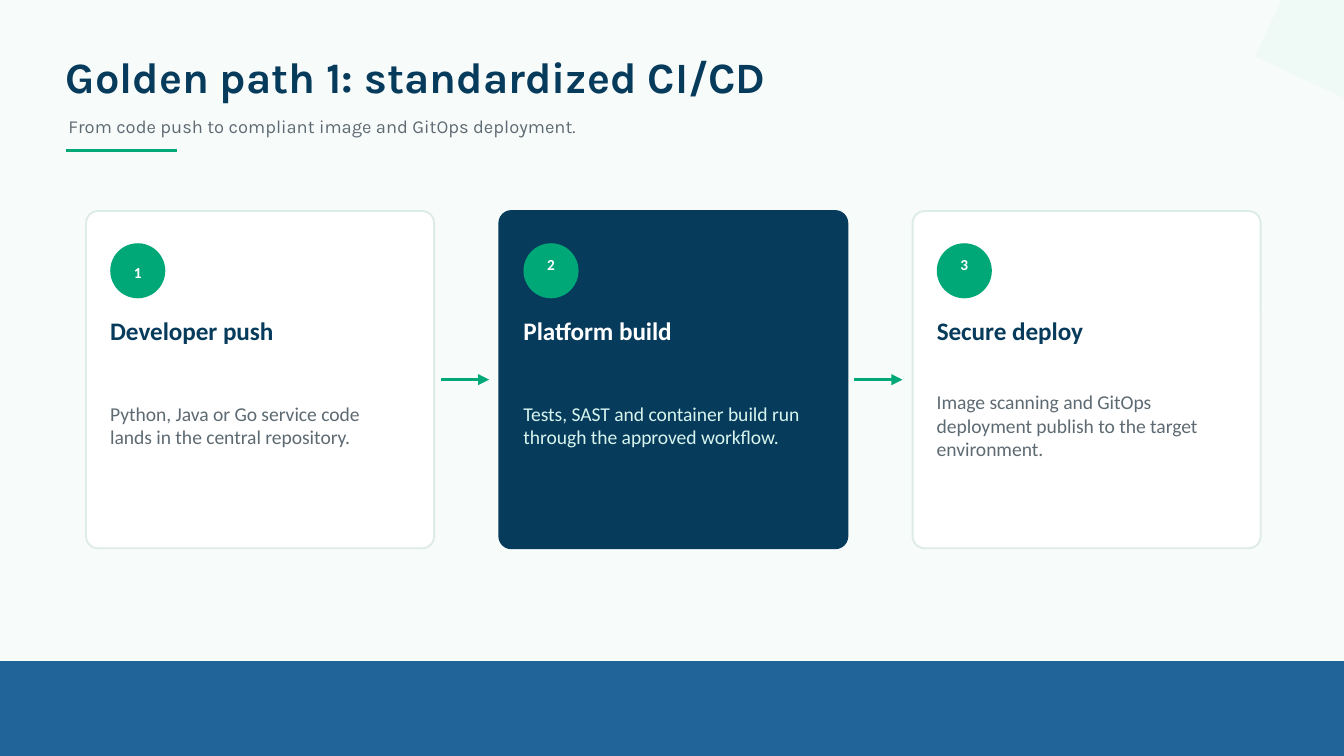
from lxml.etree import SubElement
from pptx import Presentation
from pptx.dml.color import RGBColor
from pptx.enum.shapes import MSO_CONNECTOR as Link, MSO_SHAPE as Kind
from pptx.enum.text import MSO_ANCHOR as Anchor, MSO_AUTO_SIZE as Fit, PP_ALIGN as Align
from pptx.oxml.ns import qn
from pptx.util import Inches, Pt

# Square grid: 1000 columns across the slide, 562.5 rows down.
COLUMNS, ROWS = 1000, 562.5
CELL = Inches(10) / COLUMNS

NAVY, GREEN, GREY, WHITE = "073B5C", "00A878", "5E6A72", "FFFFFF"
LIGHT_CARD = {"fill": WHITE, "edge": "DDEBE9", "heading": NAVY, "body": GREY}
DARK_CARD = {"fill": NAVY, "edge": NAVY, "heading": WHITE, "body": "D7F4ED"}
STEPS = [
    ("Developer push", "Python, Java or Go service code lands in the central repository.", LIGHT_CARD, 40),
    ("Platform build", "Tests, SAST and container build run through the approved workflow.", DARK_CARD, 34),
    ("Secure deploy", "Image scanning and GitOps deployment publish to the target environment.", LIGHT_CARD, 34),
]


def cells(*lengths):
    """Turn grid lengths into slide units."""
    return [round(length * CELL) for length in lengths]


def color(hex_value):
    return RGBColor.from_string(hex_value)


def add_panel(page, kind, box, fill, edge=None):
    panel = page.shapes.add_shape(kind, *cells(*box))
    panel.shadow.inherit = False
    panel.fill.solid()
    panel.fill.fore_color.rgb = color(fill)
    if edge:
        panel.line.color.rgb = color(edge)
        panel.line.width = Pt(1)
    else:
        panel.line.fill.background()
    return panel


def write(holder, words, hex_value, align=Align.LEFT, **font):
    """Fill a text box or placeholder with one formatted paragraph."""
    frame = holder.text_frame
    layout = {"word_wrap": True, "auto_size": Fit.NONE, "vertical_anchor": Anchor.MIDDLE,
              "margin_left": 0, "margin_top": 0, "margin_right": 0, "margin_bottom": 0}
    for name, value in layout.items():
        setattr(frame, name, value)
    para = frame.paragraphs[0]
    para.alignment = align
    span = para.add_run()
    span.text = words
    for name, value in font.items():
        setattr(span.font, name, value)
    span.font.color.rgb = color(hex_value)


def add_text(page, box, words, hex_value, **style):
    write(page.shapes.add_textbox(*cells(*box)), words, hex_value, **style)


def add_rule(page, left, top, length, weight, arrow=False):
    rule = page.shapes.add_connector(Link.STRAIGHT, *cells(left, top, left + length, top))
    rule.line.color.rgb = color(GREEN)
    rule.line.width = Pt(weight)
    properties = rule._element.spPr
    if arrow:
        SubElement(properties.find(qn("a:ln")), qn("a:tailEnd"), type="triangle")
    SubElement(properties, qn("a:effectLst"))


def add_backdrop(page):
    page.background.fill.solid()
    page.background.fill.fore_color.rgb = color("F7FBFA")
    add_panel(page, Kind.RECTANGLE, (0, 492, COLUMNS, ROWS - 492), "20649A")
    corner = add_panel(page, Kind.ARC, (810, -82, 248, 248), "EAF8F4")
    corner.rotation = 25
    tint = corner._element.spPr.find(qn("a:solidFill"))[0]
    SubElement(tint, qn("a:alpha"), val="60000")


def add_header(page, left, top, width):
    title = page.shapes.title
    place = cells(left, top, width, 41)
    for name, value in zip(("left", "top", "width", "height"), place):
        setattr(title, name, value)
    write(title, "Golden path 1: standardized CI/CD", NAVY,
          name="Karla", size=Pt(23.2), bold=True)
    add_text(page, (left + 2, top + 46, 750, 24),
             "From code push to compliant image and GitOps deployment.",
             GREY, name="Karla", size=Pt(9.8))
    add_rule(page, left, top + 76, 83, 2)


def add_card(page, box, number, step):
    left, top, width, height = box
    heading, body, look, label_drop = step
    inner, badge = left + 18, 41
    card = add_panel(page, Kind.ROUNDED_RECTANGLE, box, look["fill"], look["edge"])
    card.adjustments[0] = 0.036
    add_panel(page, Kind.OVAL, (inner, top + 24, badge, badge), GREEN)
    add_text(page, (inner, top + label_drop, badge, 11), str(number), WHITE,
             align=Align.CENTER, name="Calibri", size=Pt(8.2), bold=True)
    add_text(page, (inner, top + 76, 202, 25), heading, look["heading"],
             name="Calibri", size=Pt(13.5), bold=True)
    add_text(page, (inner, top + 122, 210, 75), body, look["body"],
             name="Calibri", size=Pt(10.5))


def add_flow(page, left, top, width, height):
    """Space the step cards evenly and put an arrow in each gap."""
    card_width = 259
    pitch = (width - card_width) / (len(STEPS) - 1)
    for index, step in enumerate(STEPS):
        card_left = left + index * pitch
        if index:
            add_rule(page, card_left - pitch + card_width + 5, top + height / 2, 36, 1.4, arrow=True)
        add_card(page, (card_left, top, card_width, height), index + 1, step)


def main():
    deck = Presentation()
    deck.slide_width, deck.slide_height = cells(COLUMNS, ROWS)
    page = deck.slides.add_slide(deck.slide_layouts[5])
    add_backdrop(page)
    add_header(page, 49, 36, 803)
    add_flow(page, 64, 157, 874, 251)
    deck.save("out.pptx")


if __name__ == "__main__":
    main()
